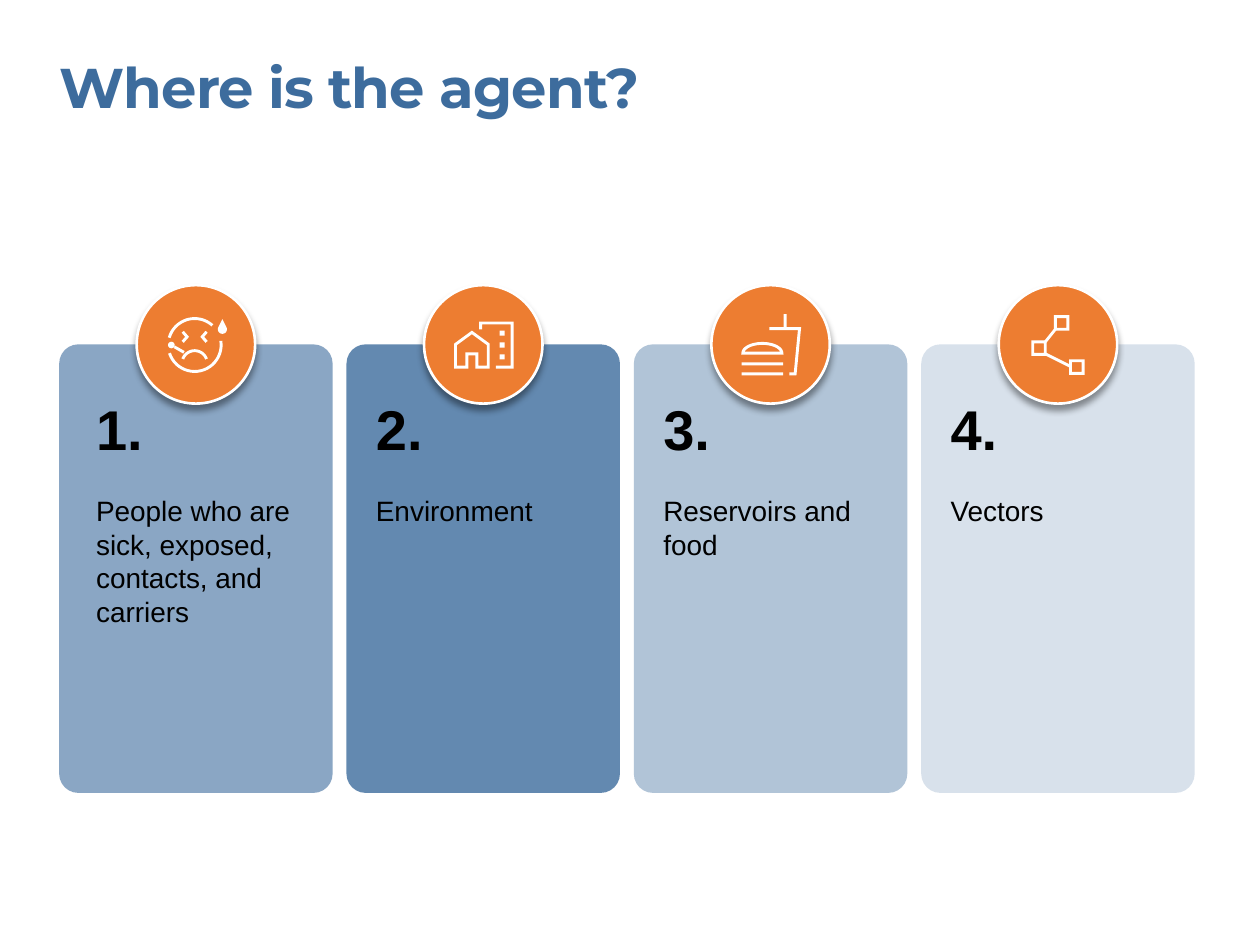
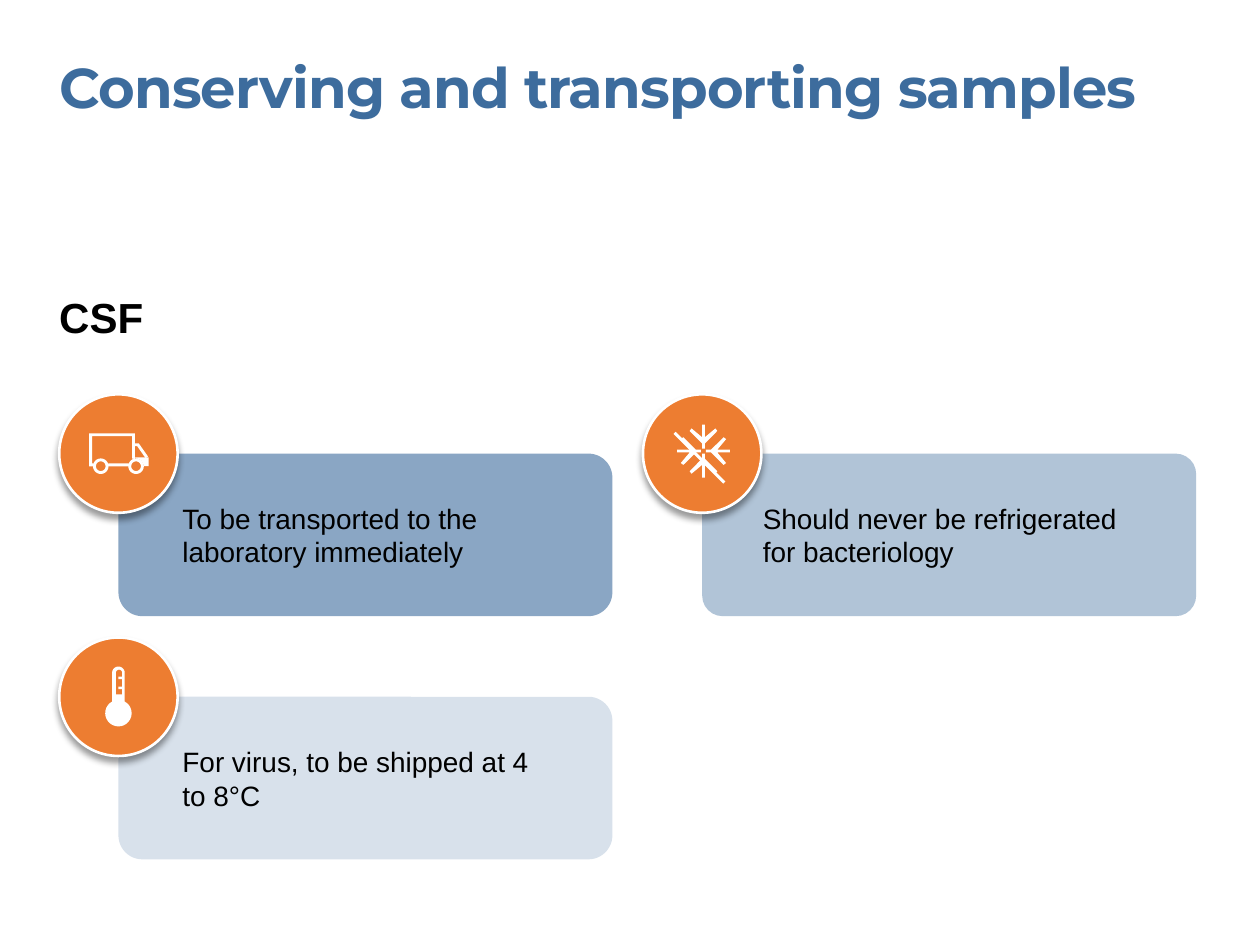
from math import cos, radians, sin

from lxml import etree
from pptx import Presentation
from pptx.dml.color import RGBColor
from pptx.enum.shapes import MSO_SHAPE
from pptx.enum.text import MSO_ANCHOR, MSO_AUTO_SIZE
from pptx.oxml.ns import qn
from pptx.util import Pt

ROUNDED = MSO_SHAPE.ROUNDED_RECTANGLE
OVAL = MSO_SHAPE.OVAL
TOP = MSO_ANCHOR.TOP
GROW = MSO_AUTO_SIZE.SHAPE_TO_FIT_TEXT

BLUE = RGBColor(0x3D, 0x6C, 0x9D)
ORANGE = RGBColor(0xED, 0x7D, 0x31)
WHITE = RGBColor(0xFF, 0xFF, 0xFF)
BLACK = RGBColor(0x00, 0x00, 0x00)

MARGIN = 33.84
BADGE = 67.68
ICON_UNIT = 0.72
HALF_STROKE = 1.15

TITLE = {"name": "Montserrat", "size": Pt(32), "bold": True}
NUMBER = {"name": "Arial", "size": Pt(32), "bold": True}
HEADING = {"name": "Arial", "size": Pt(24), "bold": True}
BODY = {"name": "Arial", "size": Pt(16), "bold": False}


def arc(x, y, radius, start, end, squash=1):
    """Return points along an arc, with angles in degrees clockwise from the right."""
    steps = 24
    angles = [radians(start + (end - start) * i / steps) for i in range(steps + 1)]
    return [(x + radius * cos(a), y + squash * radius * sin(a)) for a in angles]


def box(left, top, right, bottom):
    """Return the outline of a rectangle."""
    return [(left, top), (right, top), (right, bottom), (left, bottom)]


def square(x, y, half):
    """Return the outline of a square around its centre."""
    return box(x - half, y - half, x + half, y + half)


def mirror(points, axis=0):
    """Reflect points left to right about a vertical axis."""
    return [(2 * axis - x, y) for x, y in points]


def quarter_turns(points, x, y):
    """Return four copies of an outline, turned around a centre it is drawn relative to."""
    turns = [complex(0, 1) ** k for k in range(4)]
    turned = [[complex(*point) * turn for point in points] for turn in turns]
    return [[(x + p.real, y + p.imag) for p in outline] for outline in turned]


def stroke(points, closed=False):
    """Return the outline of an even line with mitred corners along the points."""
    spots = [complex(*point) for point in points]
    if closed:
        spots.append(spots[0])
    normals = [1j * (b - a) / abs(b - a) for a, b in zip(spots, spots[1:])]
    first, last = (normals[-1], normals[0]) if closed else (normals[0], normals[-1])
    sums = [p + q for p, q in zip([first] + normals, normals + [last])]
    mitres = [2 * HALF_STROKE * total / abs(total) ** 2 for total in sums]
    one_side = [spot + mitre for spot, mitre in zip(spots, mitres)]
    other_side = [spot - mitre for spot, mitre in zip(spots, mitres)]
    return [(p.real, p.imag) for p in one_side + other_side[::-1]]


def sick_face():
    """Return the layers of a face with a thermometer and a drop of sweat."""
    axis = -1
    head = [stroke(arc(axis, 0.5, 21, start, end)) for start, end in ((196, 312), (-9, 162))]
    eye = stroke([(-10.5, -10), (-7, -6), (-10.5, -2)])
    mouth = stroke(arc(axis, 15, 10, 200, 340))
    sweat = [(21, -20)] + arc(21, -12, 3.6, -30, 210)
    thermometer = [arc(-19.5, 0.5, 2.6, 0, 360), stroke([(-17, 2), (-9.5, 6.3)])]
    return [head + [eye, mirror(eye, axis), mouth, sweat] + thermometer]


def buildings():
    """Return the layers of a house in front of a tower."""
    windows = [square(15, y, 2) for y in (-9, 0.5, 10)]
    tower = stroke([(10, 18), (23, 18), (23, -17), (-2, -17), (-2, -12)])
    roof_and_left = [(-13, 7.5), (-13, 18), (-22, 18), (-22, 0), (-9, -9.5)]
    right = mirror(roof_and_left[:-1], -9)[::-1]
    return [windows + [tower, stroke(roof_and_left + right, closed=True)]]


def meal():
    """Return the layers of a burger and a drink."""
    bun = stroke(arc(-6.5, 7, 15.5, 180, 360, squash=0.5), closed=True)
    layers_below = [stroke([(-23, y), (10, y)]) for y in (15.5, 23.5)]
    cup = stroke([(15, 23.5), (19.5, 23.5), (23, -12.5), (-1, -12.5)])
    straw = stroke([(11.5, -24), (11.5, -13.65)])
    return [[bun, cup, straw] + layers_below]


def network():
    """Return the layers of three linked nodes."""
    nodes = [stroke(square(x, y, 5), closed=True) for x, y in ((3, -17), (-15, 3), (15, 18))]
    links = [stroke([(-2, -12), (-10, -2)]), stroke([(-10, 7.5), (10, 17.5)])]
    return [links, nodes]


def truck():
    """Return the layers of a delivery truck."""
    axle, wheel_gap = 10, 6
    wheels = [stroke(arc(x, axle, 5, 0, 360)) for x in (-14, 14)]
    cargo = stroke([(-20, 9), (-22, 9), (-22, -15), (12, -15), (12, 4)])
    floor = stroke([(-8, 9), (8, 9)])
    window = stroke([(13.15, -7), (15.5, -7), (22.5, 3)])
    bonnet = arc(14, axle, wheel_gap, 360, 270) + [(13.15, 3), (24, 3), (24, axle)]
    return [wheels + [cargo, floor], [window], [bonnet]]


def no_freezing():
    """Return the layers of a snowflake struck through."""
    half_arm = [(1.1, -2), (1.1, -6), (11, -16), (9.5, -18), (1.1, -11), (1.1, -21)]
    arm = half_arm + mirror(half_arm)[::-1]
    return [quarter_turns(arm, 1, -2), [stroke([(-22, -16.5), (17.5, 23)])]]


def thermometer():
    """Return the layers of a thermometer with two marks in its bore."""
    glass = arc(0, 13, 10.5, -62, 242) + arc(0, -19, 5, 180, 360)
    bore = arc(0.5, -19, 2.5, 180, 360) + [(3, -2), (-2, -2)]
    marks = [box(0, y, 3, y + 2) for y in (-16, -8)]
    return [[glass, bore] + marks]


SOURCES = [
    ("People who are sick, exposed, contacts, and carriers", 60, sick_face),
    ("Environment", 80, buildings),
    ("Reservoirs and food", 40, meal),
    ("Vectors", 20, network),
]
HANDLING = [
    ("To be transported to the laboratory immediately", 60, truck),
    ("Should never be refrigerated for bacteriology", 40, no_freezing),
    ("For virus, to be shipped at 4 to 8°C", 20, thermometer),
]
HANDLING_COLUMNS = [
    {"rounding": 0.147, "indent": 36.6, "text_width": 208.8},
    {"rounding": 0.126, "indent": 34.6, "text_width": 223.92},
]


class Deck:
    """Hold the shared style and the slide being filled."""

    def __init__(self):
        """Start an empty presentation of 10 by 7.5 inches."""
        self.presentation = Presentation()
        self.presentation.slide_width = Pt(720)
        self.presentation.slide_height = Pt(540)
        self.slide = None

    def start(self, title, height):
        """Add a slide with its title."""
        layout = self.presentation.slide_layouts[6]
        self.slide = self.presentation.slides.add_slide(layout)
        frame = self.text(MARGIN, 30.24, 615.6, height, [(title, TITLE)], BLUE)
        frame.paragraphs[0].runs[0].font._element.set("spc", "-50")

    def text(self, left, top, width, height, lines, color=BLACK, gap=0):
        """Add a text box with one paragraph per line and its format."""
        area = self.slide.shapes.add_textbox(Pt(left), Pt(top), Pt(width), Pt(height))
        frame = area.text_frame
        layout = {"word_wrap": True, "auto_size": GROW, "vertical_anchor": TOP,
                  "margin_left": 0, "margin_top": 0, "margin_right": 0, "margin_bottom": 0}
        for key, value in layout.items():
            setattr(frame, key, value)
        for index, (words, style) in enumerate(lines):
            paragraph = frame.add_paragraph() if index else frame.paragraphs[0]
            paragraph.space_before = Pt(gap if index else 0)
            run = paragraph.add_run()
            run.text = words
            for key, value in style.items():
                setattr(run.font, key, value)
            run.font.color.rgb = color
        return frame

    def paint(self, shape, color):
        """Give a shape a plain fill without line or shadow."""
        shape.shadow.inherit = False
        shape.fill.solid()
        shape.fill.fore_color.rgb = color
        shape.line.fill.background()

    def card(self, left, top, width, height, opacity, rounding):
        """Add a rounded blue card with the given opacity in percent."""
        card = self.slide.shapes.add_shape(ROUNDED, Pt(left), Pt(top), Pt(width), Pt(height))
        card.adjustments[0] = rounding
        self.paint(card, BLUE)
        color = card._element.spPr.find(qn("a:solidFill")).find(qn("a:srgbClr"))
        etree.SubElement(color, qn("a:alpha"), val=str(opacity * 1000))

    def badge(self, x, y, layers):
        """Add a shadowed orange circle around a white icon."""
        corner = [Pt(x - BADGE / 2), Pt(y - BADGE / 2)]
        circle = self.slide.shapes.add_shape(OVAL, *corner, Pt(BADGE), Pt(BADGE))
        self.paint(circle, ORANGE)
        circle.line.color.rgb = WHITE
        circle.line.width = Pt(1.5)
        effects = circle._element.spPr.find(qn("a:effectLst"))
        shadow = etree.SubElement(effects, qn("a:outerShdw"), blurRad=str(Pt(4)),
                                  dist=str(Pt(3)), dir="5400000", rotWithShape="0")
        color = etree.SubElement(shadow, qn("a:srgbClr"), val=str(BLACK))
        etree.SubElement(color, qn("a:alpha"), val="40000")
        for outlines in layers:
            self.drawing(x, y, outlines)

    def drawing(self, x, y, outlines):
        """Add one white freeform of outlines given relative to a point."""
        placed = [[(Pt(x + ICON_UNIT * dx), Pt(y + ICON_UNIT * dy)) for dx, dy in outline]
                  for outline in outlines]
        builder = self.slide.shapes.build_freeform(*placed[0][0])
        for outline in placed:
            if outline is not placed[0]:
                builder.move_to(*outline[0])
            builder.add_line_segments(outline[1:], close=True)
        self.paint(builder.convert_to_shape(), WHITE)


def add_sources(deck):
    """Add the slide with one numbered card for each place."""
    deck.start("Where is the agent?", 38.88)
    top, width, step = 196.8, 156.24, 164.2
    for index, (place, opacity, icon) in enumerate(SOURCES):
        left = MARGIN + index * step
        indent = 16.8 if index else 21.1
        deck.card(left, top, width, 256.32, opacity, 0.07)
        deck.badge(left + width / 2, top, icon())
        lines = [(f"{index + 1}.", NUMBER), (place, BODY)]
        deck.text(left + indent, 225.36, 120.24, 78, lines, gap=18.4)


def add_handling(deck):
    """Add the slide with the handling rules in two columns."""
    deck.start("Conserving and transporting samples", 77.76)
    deck.text(MARGIN, 166.32, 565.2, 28.8, [("CSF", HEADING)])
    for index, (rule, opacity, icon) in enumerate(HANDLING):
        row, column = divmod(index, len(HANDLING_COLUMNS))
        look = HANDLING_COLUMNS[column]
        left = MARGIN + BADGE / 2 + column * 333.6
        top = 259.2 + row * 138.96
        deck.card(left, top, 282.24, 92.88, opacity, look["rounding"])
        deck.badge(left, top, icon())
        deck.text(left + look["indent"], top + 27.36, look["text_width"], 38.88, [(rule, BODY)])


def main():
    """Build both slides and save them."""
    deck = Deck()
    add_sources(deck)
    add_handling(deck)
    deck.presentation.save("out.pptx")


if __name__ == "__main__":
    main()
